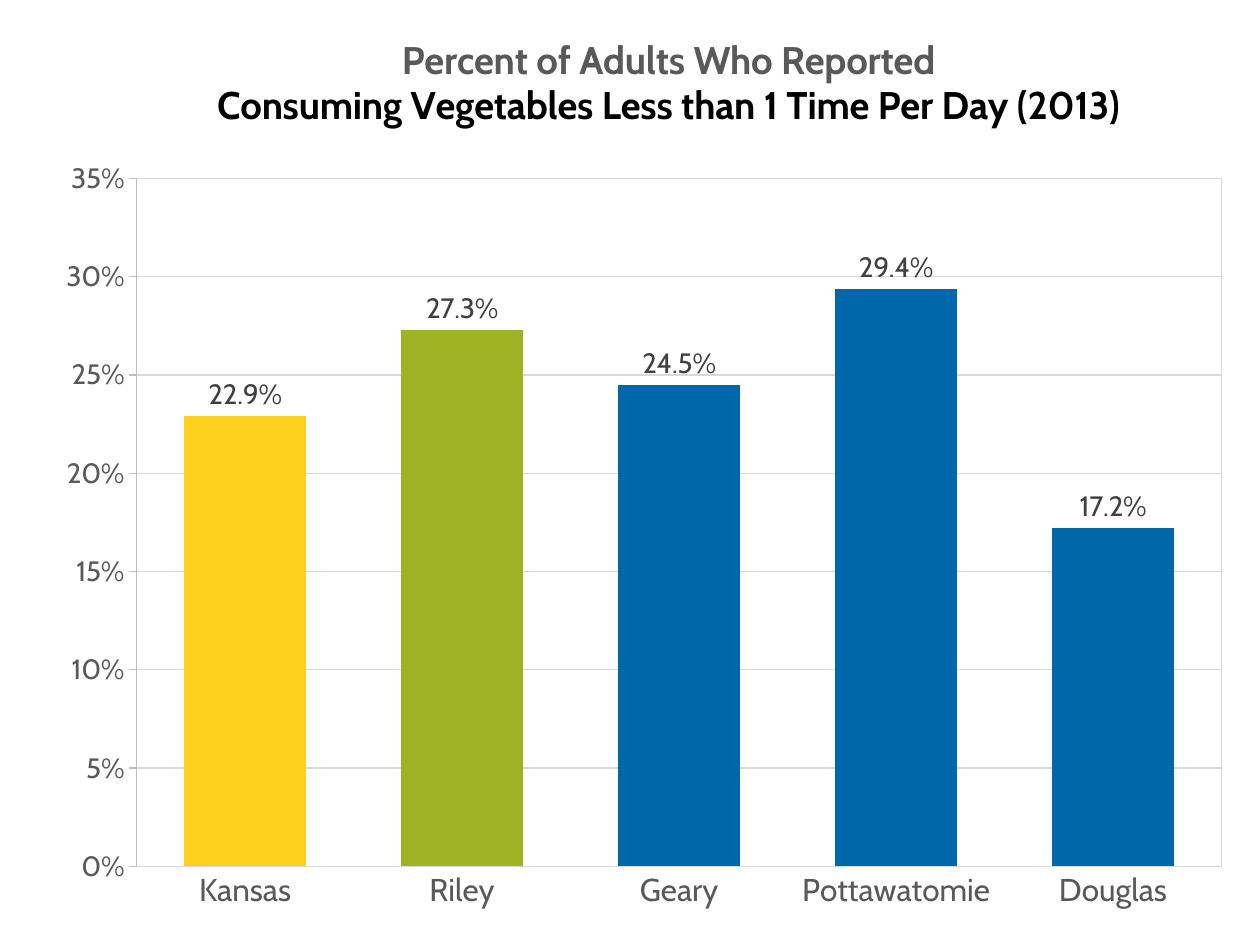
from lxml.etree import fromstring
from pptx import Presentation
from pptx.chart.data import CategoryChartData
from pptx.dml.color import RGBColor
from pptx.enum.chart import XL_CHART_TYPE as ChartType, XL_LABEL_POSITION as LabelPos
from pptx.enum.chart import XL_TICK_MARK as Tick
from pptx.oxml.ns import nsdecls, qn
from pptx.util import Inches, Pt

COLORS = {"black": "000000", "text": "595959", "label": "404040", "grid": "D9D9D9",
          "axis": "BDBDBD", "series": "066243", "state": "FFCF1D", "county": "9EB323",
          "peer": "0067AA"}
TITLE = [("Percent of Adults Who Reported", "text"),
         ("Consuming Vegetables Less than 1 Time Per Day (2013)", "black")]
BARS = [("Kansas", 0.229, "state"), ("Riley", 0.273, "county"), ("Geary", 0.245, "peer"),
        ("Pottawatomie", 0.294, "peer"), ("Douglas", 0.172, "peer")]


class Deck:
    """Hold the style and the current slide, with a method for each kind of element."""

    def __init__(self, width, height, font):
        self.prs = Presentation()
        self.prs.slide_width, self.prs.slide_height = Inches(width), Inches(height)
        self.font = font
        self.s = self.prs.slides.add_slide(self.prs.slide_layouts[6])

    def apply(self, obj, **values):
        for name, value in values.items():
            setattr(obj, name, value)

    def style(self, font, size, color, bold=False):
        self.apply(font, name=self.font, size=Pt(size), bold=bold)
        font.color.rgb = RGBColor.from_string(COLORS[color])

    def fill(self, fmt, color):
        fmt.fill.solid()
        fmt.fill.fore_color.rgb = RGBColor.from_string(COLORS[color])

    def line(self, fmt, color):
        fmt.line.width = Pt(0.75)
        fmt.line.color.rgb = RGBColor.from_string(COLORS[color])

    def layout(self, parent, index, target="", **shares):
        for old in parent.findall(qn("c:layout")):
            parent.remove(old)
        modes = "".join(f'<c:{k}Mode val="edge"/>' for k in "xy")
        values = "".join(f'<c:{k} val="{v}"/>' for k, v in shares.items())
        parent.insert(index, fromstring(
            f'<c:layout {nsdecls("c")}><c:manualLayout>{target}{modes}{values}'
            '</c:manualLayout></c:layout>'))

    def column_chart(self, bars, x, y, w, h):
        data = CategoryChartData(number_format="0.0%")
        data.categories = [name for name, _, _ in bars]
        data.add_series("Series 1", [value for _, value, _ in bars])
        sw, sh = self.prs.slide_width, self.prs.slide_height
        chart = self.s.shapes.add_chart(ChartType.COLUMN_CLUSTERED, int(x * sw), int(y * sh),
                                        int(w * sw), int(h * sh), data).chart
        chart.has_legend = False
        self.style(chart.font, 10, "black")
        plot = chart.plots[0]
        self.apply(plot, gap_width=77, vary_by_categories=False, has_data_labels=True)
        series = plot.series[0]
        self.fill(series.format, "series")
        for i, (_, _, color) in enumerate(bars):
            self.fill(series.points[i].format, color)
        self.apply(plot.data_labels, show_value=True, number_format="0.0%",
                   number_format_is_linked=False, position=LabelPos.OUTSIDE_END)
        self.style(plot.data_labels.font, 16, "label")
        return chart

    def axis(self, axis, size, color, tick, **values):
        self.apply(axis, major_tick_mark=tick, minor_tick_mark=Tick.NONE, **values)
        self.style(axis.tick_labels.font, size, "text")
        self.line(axis.format, color)
        if axis.has_major_gridlines:
            self.line(axis.major_gridlines.format, "grid")

    def chart_title(self, chart, lines, size, x, y):
        title = chart.chart_title
        tf = title.text_frame
        for i, (text, color) in enumerate(lines):
            p = tf.add_paragraph() if i else tf.paragraphs[0]
            r = p.add_run()
            r.text = text
            self.style(r.font, size, color, True)
        title.include_in_layout = False
        self.layout(chart._chartSpace.find(".//" + qn("c:title")), 1, x=x, y=y)

    def plot_area(self, chart, x, y, w, h):
        area = chart._chartSpace.find(".//" + qn("c:plotArea"))
        self.layout(area, 0, '<c:layoutTarget val="inner"/>', x=x, y=y, w=w, h=h)
        area.append(fromstring(
            f'<c:spPr {nsdecls("c", "a")}><a:noFill/><a:ln w="{Pt(0.75)}"><a:solidFill>'
            f'<a:srgbClr val="{COLORS["grid"]}"/></a:solidFill></a:ln></c:spPr>'))


def main():
    deck = Deck(10, 7.5, "Cabin")
    chart = deck.column_chart(BARS, 0.017, 0.023, 0.983, 0.977)
    deck.chart_title(chart, TITLE, 22, 0.155, 0.01)
    deck.axis(chart.category_axis, 18, "grid", Tick.NONE)
    deck.axis(chart.value_axis, 16, "axis", Tick.OUTSIDE, minimum_scale=0,
              maximum_scale=0.35, major_unit=0.05, has_major_gridlines=True)
    deck.apply(chart.value_axis.tick_labels, number_format="0%", number_format_is_linked=False)
    deck.plot_area(chart, 0.093, 0.17, 0.876, 0.745)
    deck.prs.save("out.pptx")


if __name__ == "__main__":
    main()
